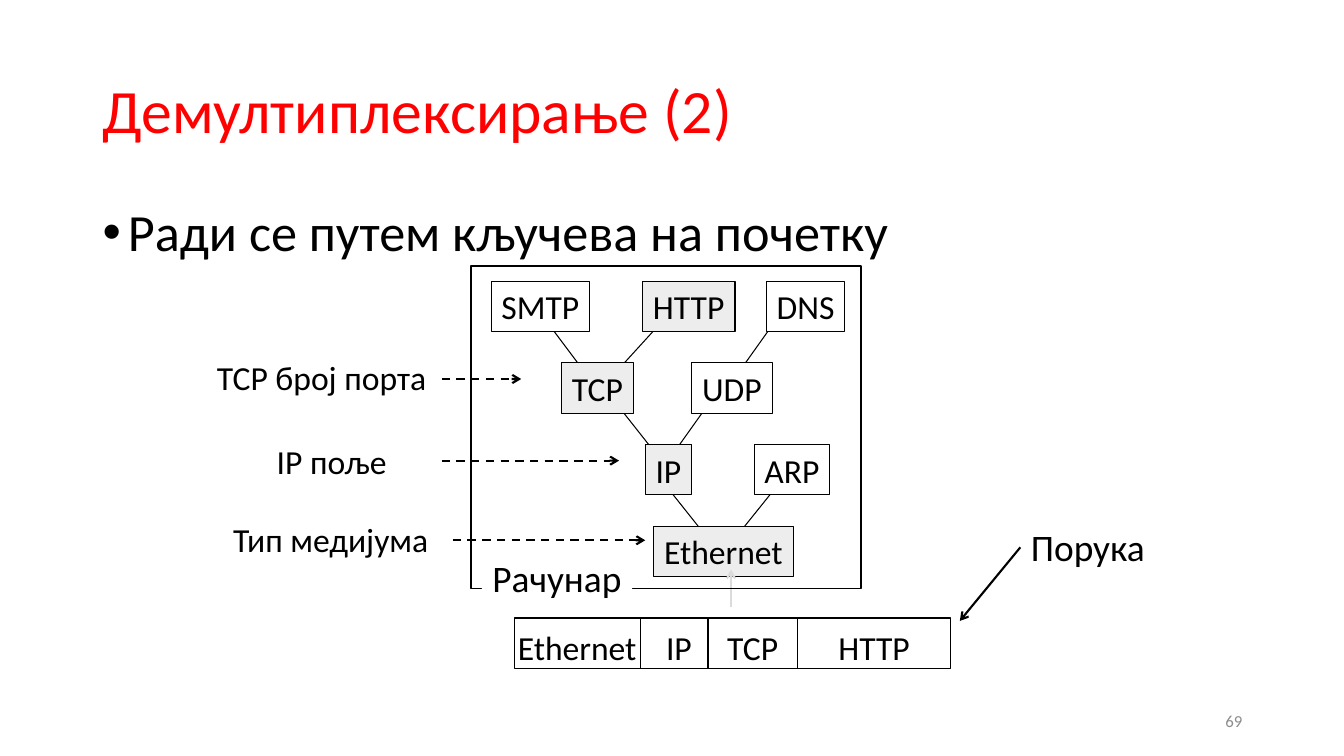
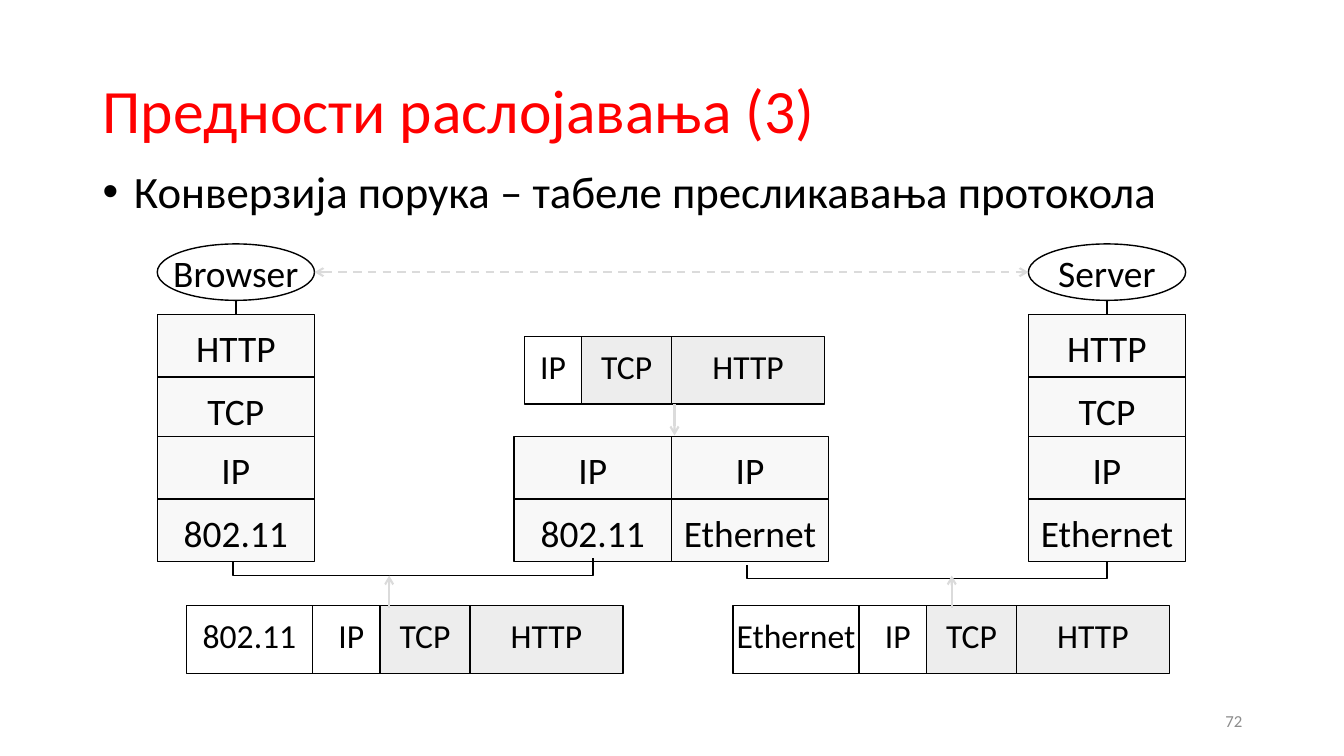
from lxml.etree import SubElement
from pptx import Presentation
from pptx.dml.color import RGBColor
from pptx.enum.dml import MSO_LINE
from pptx.enum.shapes import MSO_CONNECTOR, MSO_SHAPE
from pptx.enum.text import MSO_ANCHOR, PP_ALIGN
from pptx.oxml.ns import qn
from pptx.util import Inches, Pt

BLACK = RGBColor(0x00, 0x00, 0x00)
WHITE = RGBColor(0xFF, 0xFF, 0xFF)
RED = RGBColor(0xFF, 0x00, 0x00)
NUMBER_GRAY = RGBColor(0x8C, 0x8C, 0x8C)
ARROW_GRAY = RGBColor(0xDB, 0xDB, 0xDB)
CARRIED = RGBColor(0xED, 0xED, 0xED)
LAYER = RGBColor(0xF8, 0xF8, 0xF8)
FONT = "Calibri"
SMALL, LARGE = 24, 26.7

# Message fields: label, width, fill, shift of the label to the right
PLAIN_FIELDS = [("IP", 0.67, None, 0.05), ("TCP", 0.89, None, 0), ("HTTP", 1.52, None, 0)]
CARRIED_FIELDS = [("TCP", 0.89, CARRIED, 0), ("HTTP", 1.52, CARRIED, 0)]
PACKET_FIELDS = [("IP", 0.67, None, 0.05)] + CARRIED_FIELDS

LAYER_WIDTH, LAYER_HEIGHT = 1.56, 0.62
LAYER_OFFSETS = [0, 0.62, 1.21, 1.83]


def write(shape, text, size, color=BLACK, align=PP_ALIGN.CENTER,
          anchor=MSO_ANCHOR.MIDDLE, wrap=False):
    frame = shape.text_frame
    frame.text = text
    frame.word_wrap = wrap
    frame.vertical_anchor = anchor
    para = frame.paragraphs[0]
    para.alignment = align
    font = para.runs[0].font
    font.name, font.size, font.color.rgb = FONT, Pt(size), color
    return para


def add_text(slide, box, text, size, **style):
    label = slide.shapes.add_textbox(*map(Inches, box))
    return write(label, text, size, **style)


def add_box(slide, box, fill=None, line_width=1, kind=MSO_SHAPE.RECTANGLE):
    shape = slide.shapes.add_shape(kind, *map(Inches, box))
    shape.shadow.inherit = False
    if fill is None:
        shape.fill.background()
    else:
        shape.fill.solid()
        shape.fill.fore_color.rgb = fill
    if line_width:
        shape.line.color.rgb = BLACK
        shape.line.width = Pt(line_width)
    else:
        shape.line.fill.background()
    return shape


def add_line(slide, start, end, color=BLACK, width=1.0, dashed=False, arrows=()):
    """Draw a straight line; arrows names its ends: headEnd, tailEnd."""
    line = slide.shapes.add_connector(
        MSO_CONNECTOR.STRAIGHT, *map(Inches, (*start, *end)))
    line.line.color.rgb = color
    line.line.width = Pt(width)
    if dashed:
        line.line.dash_style = MSO_LINE.DASH
    properties = line._element.spPr
    for end_name in arrows:
        SubElement(properties.find(qn("a:ln")), qn("a:" + end_name), type="arrow")
    SubElement(properties, qn("a:effectLst"))
    return line


def add_bullet(slide, box, text, size, indent):
    para = add_text(slide, box, text, size, align=PP_ALIGN.LEFT,
                    anchor=MSO_ANCHOR.TOP, wrap=True)
    properties = para._p.get_or_add_pPr()
    properties.set("marL", str(Inches(indent)))
    properties.set("indent", str(-Inches(indent)))
    SubElement(properties, qn("a:buFont"), typeface="Arial")
    SubElement(properties, qn("a:buChar"), char="•")
    return para


def add_page(deck, title, number):
    slide = deck.slides.add_slide(deck.slide_layouts[6])
    para = add_text(slide, (0.92, 0.4, 11.5, 1.45), title, 44, color=RED,
                    align=PP_ALIGN.LEFT, wrap=True)
    para.line_spacing = 0.9
    add_text(slide, (9.42, 6.95, 3, 0.4), number, 12, color=NUMBER_GRAY,
             align=PP_ALIGN.RIGHT, wrap=True)
    return slide


def message_bar(slide, left, top, height, fields):
    for label, width, fill, shift in fields:
        cell = add_box(slide, (left, top, width, height), fill)
        write(cell, label, SMALL, anchor=MSO_ANCHOR.TOP)
        frame = cell.text_frame
        frame.margin_left, frame.margin_right = Inches(2 * shift), 0
        frame.margin_top = Inches(0.09)
        left += width


def protocol_tree(slide, left, top):
    edges = [
        (3.03, 0.53, 2.61, 1.12), (0.7, 0.48, 1.12, 1.04), (1.96, 0.48, 1.45, 1.04),
        (1.44, 1.36, 1.89, 1.93), (2.42, 1.28, 2.0, 1.87),
        (2.31, 2.65, 1.96, 2.21), (2.66, 2.65, 3.11, 2.09),
    ]
    rows = [
        [("SMTP", 0.2, 0.98, WHITE), ("HTTP", 1.7, 0.92, CARRIED), ("DNS", 2.93, 0.78, WHITE)],
        [("TCP", 0.9, 0.71, CARRIED), ("UDP", 2.19, 0.8, WHITE)],
        [("IP", 1.73, 0.46, CARRIED), ("ARP", 2.81, 0.75, WHITE)],
        [("Ethernet", 1.81, 1.39, CARRIED)],
    ]
    for x1, y1, x2, y2 in edges:
        add_line(slide, (left + x1, top + y1), (left + x2, top + y2), width=0.75)
    for index, row in enumerate(rows):
        for name, x, width, fill in row:
            box = (left + x, top + 0.15 + 0.81 * index, width, 0.5)
            write(add_box(slide, box, fill, 0.75), name, SMALL)
    add_line(slide, (left + 2.58, top + 3.38), (left + 2.58, top + 3.01),
             ARROW_GRAY, 1.5, arrows=["tailEnd"])
    add_box(slide, (left, top, 3.87, 3.2))
    caption = add_box(slide, (left + 0.11, top + 2.81, 1.49, 0.55), WHITE, 0)
    write(caption, "Рачунар", LARGE)


def key_labels(slide, left, top):
    """Name the key read at each level, with an arrow into the tree."""
    keys = [
        ("TCP број порта", 1.15, 0, 0.27, 2.34, 3.13),
        ("IP поље", 1.25, 0.83, 1.08, 2.34, 4.1),
        ("Тип медијума", 1.24, 1.61, 1.87, 2.45, 4.36),
    ]
    for name, center, label_y, arrow_y, start, end in keys:
        add_text(slide, (left + center - 1.15, top + label_y, 2.3, 0.5), name, SMALL)
        add_line(slide, (left + start, top + arrow_y), (left + end, top + arrow_y),
                 width=1.5, dashed=True, arrows=["tailEnd"])


def layer_stack(slide, left, top, names):
    """Stack the lowest layers of a host and return the top one."""
    layers = []
    for name, offset in zip(names, LAYER_OFFSETS[-len(names):]):
        layer = add_box(slide, (left, top + offset, LAYER_WIDTH, LAYER_HEIGHT), LAYER)
        write(layer, name, LARGE, anchor=MSO_ANCHOR.TOP)
        layer.text_frame.margin_top = Inches(0.11)
        layers.append(layer)
    return layers[0]


def host(slide, left, top, program, link):
    oval = add_box(slide, (left, top, LAYER_WIDTH, 0.56), WHITE, kind=MSO_SHAPE.OVAL)
    write(oval, program, LARGE)
    top_layer = layer_stack(slide, left, top + 0.7, ["HTTP", "TCP", "IP", link])
    center = left + LAYER_WIDTH / 2
    stem = add_line(slide, (center, top + 0.56), (center, top + 0.7))
    stem.end_connect(top_layer, 0)


def link_bracket(slide, left, top, drop, rise):
    """Join two stacks from below; rise is the height of the right end."""
    right, bottom = left + 3.57, top + drop
    points = [(left, top), (left, bottom), (right, bottom), (right, bottom - rise)]
    points = [(Inches(x), Inches(y)) for x, y in points]
    builder = slide.shapes.build_freeform(*points[0])
    builder.add_line_segments(points[1:], close=False)
    bracket = builder.convert_to_shape()
    bracket.shadow.inherit = False
    bracket.fill.background()
    bracket.line.color.rgb = BLACK
    bracket.line.width = Pt(1)


def demultiplexing_slide(deck):
    slide = add_page(deck, "Демултиплексирање (2)", "69")
    para = add_bullet(slide, (0.92, 2, 11.5, 4.76),
                      "Ради се путем кључева на почетку", 37.3, 0.25)
    para.line_spacing = 0.9
    para.space_before = Pt(10)
    message_bar(slide, 5.1, 6.13, 0.5, [("Ethernet", 1.25, None, 0)] + PLAIN_FIELDS)
    protocol_tree(slide, 4.67, 2.64)
    key_labels(slide, 2.04, 3.49)
    add_text(slide, (10.12, 5.15, 1.34, 0.55), "Порука", LARGE)
    add_line(slide, (10.12, 5.43), (9.52, 6.16), width=1.5, arrows=["tailEnd"])


def conversion_slide(deck):
    slide = add_page(deck, "Предности раслојавања (3)", "72")
    host(slide, 1.56, 2.42, "Browser", "802.11")
    host(slide, 10.2, 2.42, "Server", "Ethernet")
    for left, link in [(5.1, "802.11"), (6.66, "Ethernet")]:
        layer_stack(slide, left, 3.12, ["IP", link])
    add_line(slide, (3.12, 2.7), (10.2, 2.7), ARROW_GRAY, 1.5, dashed=True,
             arrows=["headEnd", "tailEnd"])
    link_bracket(slide, 2.31, 5.58, 0.13, 0.17)
    link_bracket(slide, 7.41, 5.61, 0.13, 0.17)
    message_bar(slide, 5.2, 3.34, 0.67, [("IP", 0.57, None, 0)] + CARRIED_FIELDS)
    for left, link in [(1.85, "802.11"), (7.27, "Ethernet")]:
        message_bar(slide, left, 6.01, 0.67, [(link, 1.25, None, 0)] + PACKET_FIELDS)
    for x, start, end in [(6.69, 4.01, 4.32), (3.86, 6.03, 5.71), (9.44, 6.03, 5.71)]:
        add_line(slide, (x, start), (x, end), ARROW_GRAY, 1.5, arrows=["tailEnd"])
    add_bullet(slide, (0.92, 1.58, 11.13, 0.64),
               "Конверзија порука – табеле пресликавања протокола", 32, 0.31)


def main():
    deck = Presentation()
    deck.slide_width, deck.slide_height = Inches(13.33), Inches(7.5)
    demultiplexing_slide(deck)
    conversion_slide(deck)
    deck.save("out.pptx")


if __name__ == "__main__":
    main()
